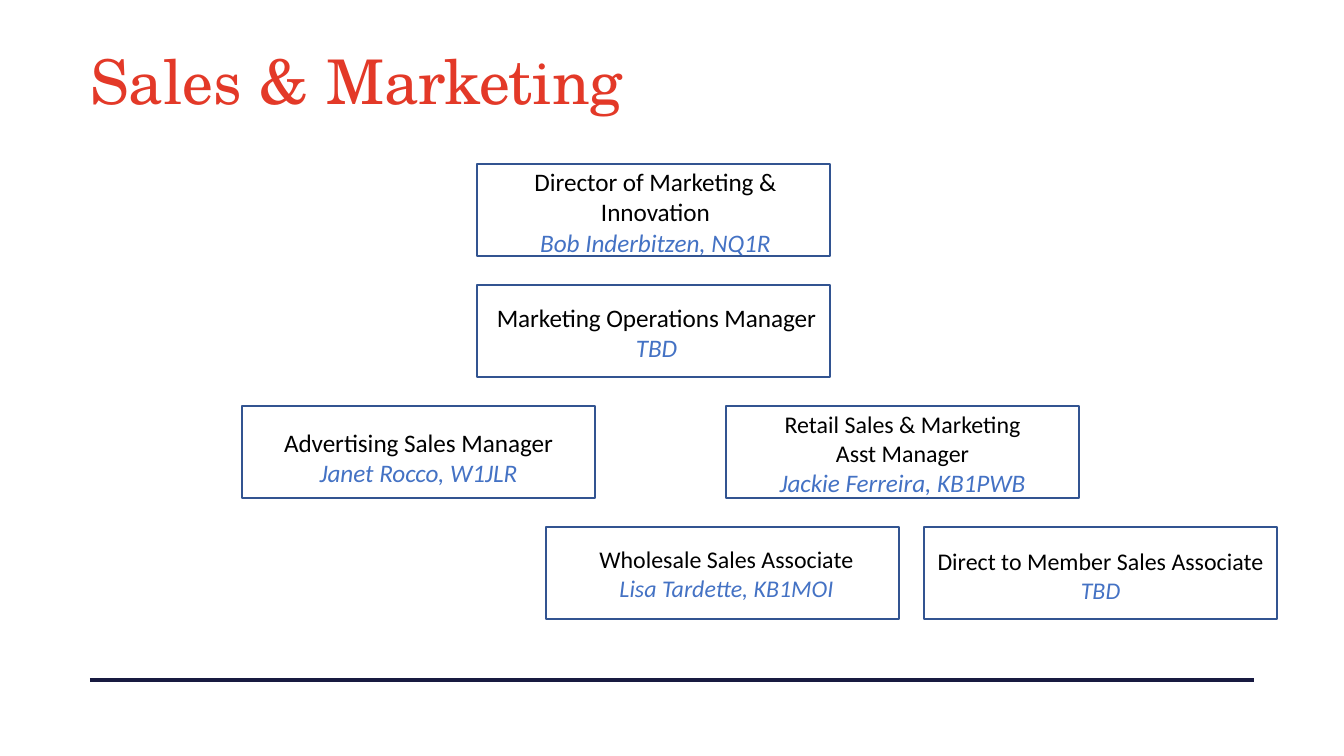
"""Build the Sales & Marketing organisation chart slide."""
from lxml import etree
from pptx import Presentation, util as u
from pptx.dml.color import RGBColor
from pptx.enum import shapes, text
from pptx.oxml.ns import qn

PX = 914400 / 134.4
COLORS = {"title": "E33928", "rule": "181A40", "border": "325491",
          "role": "000000", "person": "4472C4"}
TITLE = "Sales & Marketing"
BOX_W, BOX_H = 353, 92
ROW_TOP, ROW_STEP = 164, 121

# row, box left, text (dx, dy, width, height), role lines, role size, person, person size
POSITIONS = [
    (0, 477, (5, -4, 347, 105), ["Director of Marketing & Innovation"], 13.5,
     "Bob Inderbitzen, NQ1R", 13.5),
    (1, 477, (3, 11, BOX_W, 75), ["Marketing Operations Manager"], 13.5, "TBD", 13.5),
    (2, 726, (0, -3, BOX_W, 102), ["Retail Sales & Marketing", "Asst Manager"], 12.8,
     "Jackie Ferreira, KB1PWB", 13.5),
    (2, 242, (0, 15, BOX_W, 75), ["Advertising Sales Manager"], 13.5,
     "Janet Rocco, W1JLR", 13.5),
    (3, 924, (0, 13, BOX_W, 71), ["Direct to Member Sales Associate"], 12.8, "TBD", 12.8),
    (3, 546, (4, 11, BOX_W, 71), ["Wholesale Sales Associate"], 12.8,
     "Lisa Tardette, KB1MOI", 12.8),
]


def px(*lengths):
    return [u.Emu(round(n * PX)) for n in lengths]


def color(name):
    return RGBColor.from_string(COLORS[name])


def add_run(p, content, font, size, name, italic=False):
    r = p.add_run()
    r.text = content
    r.font.name, r.font.size, r.font.italic = font, u.Pt(size), italic
    r.font.color.rgb = color(name)


def add_title(s):
    sp = s.shapes.title
    sp.left, sp.top, sp.width, sp.height = px(90, 40, 1159, 89)
    tf = sp.text_frame
    tf.word_wrap, tf.auto_size = True, text.MSO_AUTO_SIZE.NONE
    tf.vertical_anchor = text.MSO_ANCHOR.MIDDLE
    tf.margin_left = tf.margin_right = 0
    tf.margin_top = tf.margin_bottom = u.Inches(0.04)
    p = tf.paragraphs[0]
    p.alignment, p.line_spacing = text.PP_ALIGN.LEFT, 0.9
    add_run(p, TITLE, "TeX Gyre Schola", 33, "title")


def add_rule(s):
    line = s.shapes.add_connector(shapes.MSO_CONNECTOR.STRAIGHT, *px(90, 680, 1254, 680))
    line.line.color.rgb, line.line.width = color("rule"), u.Pt(2)
    etree.SubElement(line.element.spPr, qn("a:effectLst"))


def add_position(s, row, left, offset, roles, role_size, person, person_size):
    top = ROW_TOP + row * ROW_STEP
    box = s.shapes.add_shape(shapes.MSO_SHAPE.RECTANGLE, *px(left, top, BOX_W, BOX_H))
    box.shadow.inherit = False
    box.fill.background()
    box.line.color.rgb, box.line.width = color("border"), u.Pt(1)

    dx, dy, width, height = offset
    tf = s.shapes.add_textbox(*px(left + dx, top + dy, width, height)).text_frame
    tf.word_wrap, tf.auto_size = True, text.MSO_AUTO_SIZE.SHAPE_TO_FIT_TEXT
    lines = [(role, role_size, "role", False) for role in roles]
    lines.append((person, person_size, "person", True))
    for i, (content, size, name, italic) in enumerate(lines):
        p = tf.add_paragraph() if i else tf.paragraphs[0]
        p.alignment = text.PP_ALIGN.CENTER
        add_run(p, content, "Calibri", size, name, italic)


def main():
    prs = Presentation()
    prs.slide_width, prs.slide_height = px(1344, 756)
    s = prs.slides.add_slide(prs.slide_layouts[5])
    add_rule(s)
    add_title(s)
    for position in POSITIONS:
        add_position(s, *position)
    prs.save("out.pptx")


if __name__ == "__main__":
    main()
